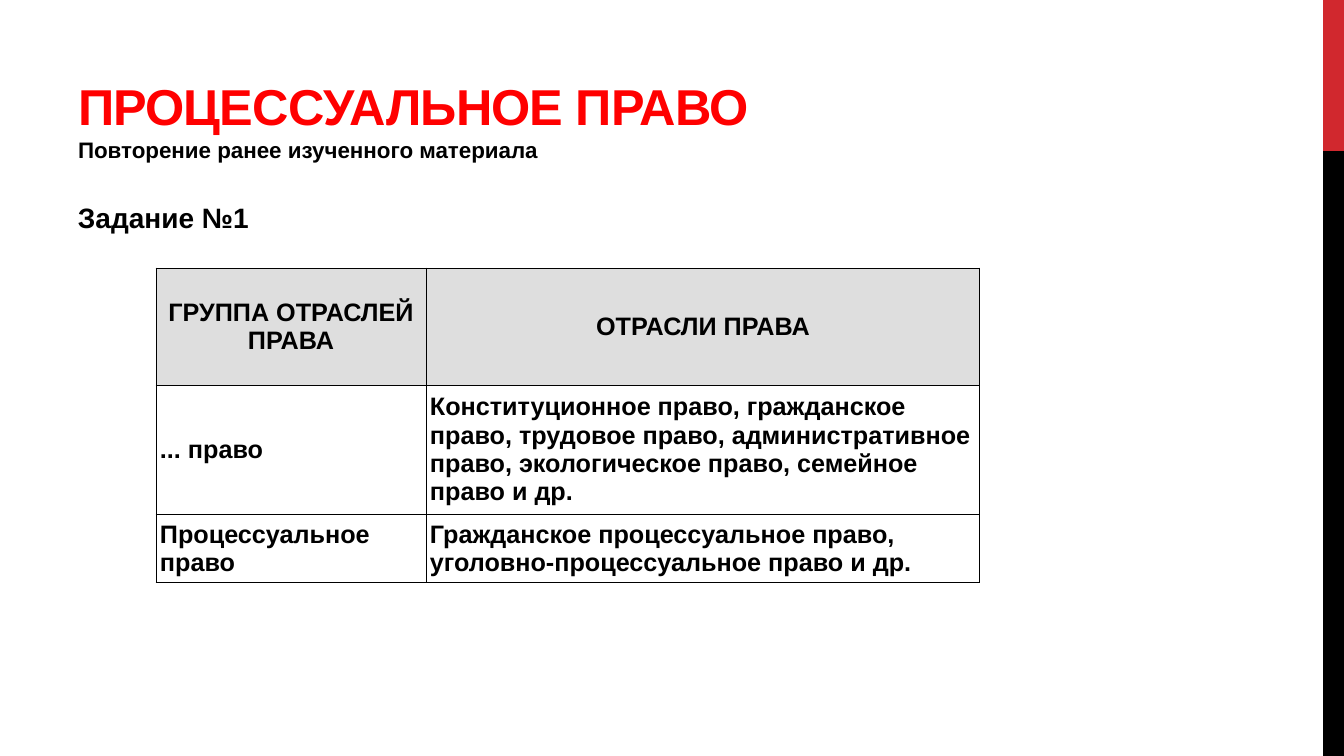
from lxml.etree import SubElement
from pptx import Presentation
from pptx.dml.color import RGBColor
from pptx.enum.shapes import MSO_SHAPE
from pptx.enum.text import MSO_ANCHOR as ANCHOR, MSO_AUTO_SIZE as AUTO, PP_ALIGN as ALIGN
from pptx.oxml.ns import qn
from pptx.util import Emu, Pt

RED = RGBColor(0xFF, 0x00, 0x00)
ACCENT = RGBColor(0xD1, 0x28, 0x2E)
BLACK = RGBColor(0x00, 0x00, 0x00)
GREY = RGBColor(0xDE, 0xDE, 0xDE)

FONT = "Arial"
COL_WIDTHS = [270, 554]
ROW_HEIGHTS = [117, 129, 69]
ROWS = [
    ("ГРУППА ОТРАСЛЕЙ ПРАВА", "ОТРАСЛИ ПРАВА"),
    ("... право",
     "Конституционное право, гражданское право, трудовое право, "
     "административное право, экологическое право, семейное право и др."),
    ("Процессуальное право",
     "Гражданское процессуальное право, уголовно-процессуальное право и др."),
]


def px(n):
    return Emu(round(n * 914400 / 100.8))


def style(r, size, color=BLACK):
    r.font.name = FONT
    r.font.size = Pt(size)
    r.font.bold = True
    r.font.color.rgb = color


def add_side_bar(s, x, y, w, h):
    split = h // 5
    for top, height, color in ((y, split, ACCENT), (y + split, h - split, BLACK)):
        sp = s.shapes.add_shape(MSO_SHAPE.RECTANGLE, px(x), px(top), px(w), px(height))
        sp.shadow.inherit = False
        sp.fill.solid()
        sp.fill.fore_color.rgb = color
        sp.line.fill.background()


def set_title(s, x, y, w, h):
    sp = s.shapes.title
    sp.left, sp.top, sp.width, sp.height = px(x), px(y), px(w), px(h)
    tf = sp.text_frame
    tf.word_wrap = True
    tf.auto_size = AUTO.NONE
    tf.vertical_anchor = ANCHOR.BOTTOM
    p = tf.paragraphs[0]
    p.text = "ПРОЦЕССУАЛЬНОЕ ПРАВО\vПовторение ранее изученного материала"
    p.alignment = ALIGN.LEFT
    heading, subtitle = p.runs
    style(heading, 36, RED)
    heading._r.get_or_add_rPr().set("spc", "-60")
    style(subtitle, 16)


def add_task(s, x, y, w, h):
    tf = s.shapes.add_textbox(px(x), px(y), px(w), px(h)).text_frame
    tf.word_wrap = True
    p = tf.paragraphs[0]
    p.text = "Задание №1"
    p.space_after = Pt(6)
    style(p.runs[0], 20)


def set_borders(cell):
    tc_pr = cell._tc.get_or_add_tcPr()
    for i, side in enumerate(("a:lnL", "a:lnR", "a:lnT", "a:lnB")):
        ln = SubElement(tc_pr, qn(side), w=str(Pt(0.75)))
        fill = SubElement(ln, qn("a:solidFill"))
        SubElement(fill, qn("a:srgbClr"), val=str(BLACK))
        tc_pr.insert(i, ln)  # borders come before the cell fill


def add_law_table(s, x, y):
    table = s.shapes.add_table(len(ROWS), len(COL_WIDTHS), px(x), px(y),
                               px(sum(COL_WIDTHS)), px(sum(ROW_HEIGHTS))).table
    table.horz_banding = False
    for col, width in zip(table.columns, COL_WIDTHS):
        col.width = px(width)
    for i, (row, height) in enumerate(zip(table.rows, ROW_HEIGHTS)):
        row.height = px(height)
        for cell, text in zip(row.cells, ROWS[i]):
            cell.margin_left = cell.margin_right = px(4)
            cell.margin_top = cell.margin_bottom = px(4)
            cell.vertical_anchor = ANCHOR.MIDDLE
            p = cell.text_frame.paragraphs[0]
            p.text = text
            p.alignment = ALIGN.LEFT if i else ALIGN.CENTER
            style(p.runs[0], 18)
            if i:
                cell.fill.background()
            else:
                cell.fill.solid()
                cell.fill.fore_color.rgb = GREY
            set_borders(cell)


def main():
    prs = Presentation()
    prs.slide_width, prs.slide_height = px(1344), px(756)
    s = prs.slides.add_slide(prs.slide_layouts[5])
    add_side_bar(s, 1323, 0, 21, 756)
    set_title(s, 68, 17, 851, 151)
    add_task(s, 68, 196, 1120, 482)
    add_law_table(s, 156, 268)
    prs.save("out.pptx")


if __name__ == "__main__":
    main()
